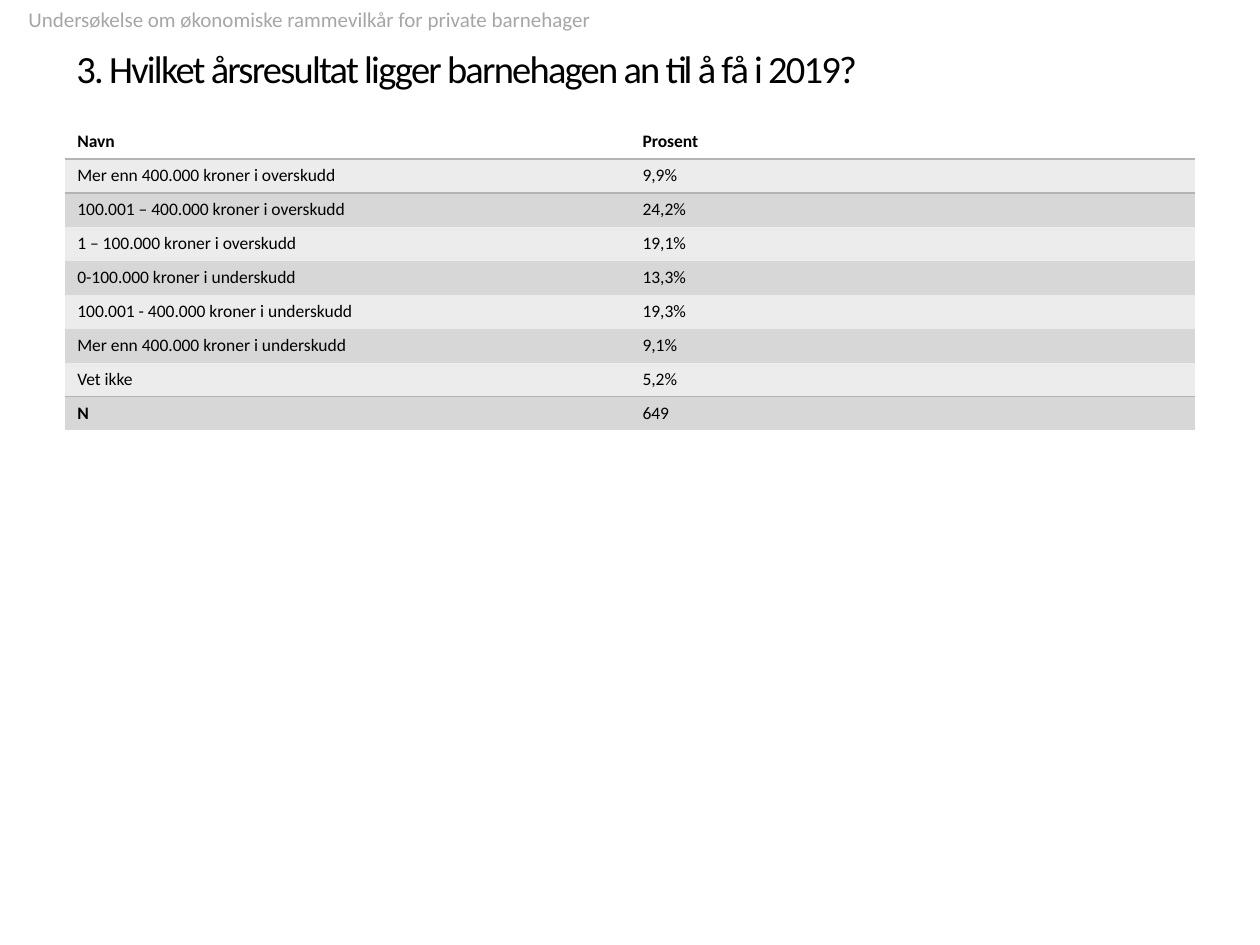
import pptx
import pptx.util
import pptx.dml.color
import pptx.enum.text
import pptx.oxml
import pptx.oxml.ns
from lxml import etree

Pt = pptx.util.Pt
RGB = pptx.dml.color.RGBColor
BLACK = RGB(0x00, 0x00, 0x00)
WHITE = RGB(0xFF, 0xFF, 0xFF)
GREY = RGB(0xA6, 0xA6, 0xA6)
RULE = RGB(0xB4, 0xB4, 0xB4)
LIGHT = RGB(0xEC, 0xEC, 0xEC)
DARK = RGB(0xD7, 0xD7, 0xD8)

ANCHOR = pptx.enum.text.MSO_ANCHOR
LEFT = pptx.enum.text.PP_ALIGN.LEFT
FRAME = {"word_wrap": True, "auto_size": pptx.enum.text.MSO_AUTO_SIZE.NONE}
TITLE = {"name": "Calibri", "size": Pt(22), "bold": False}
TOPIC = {"name": "Calibri", "size": Pt(12), "bold": False}
CELL = {"name": "Calibri", "size": Pt(10)}

ROWS = [
    ("Navn", "Prosent"),
    ("Mer enn 400.000 kroner i overskudd", "9,9%"),
    ("100.001 – 400.000 kroner i overskudd", "24,2%"),
    ("1 – 100.000 kroner i overskudd", "19,1%"),
    ("0-100.000 kroner i underskudd", "13,3%"),
    ("100.001 - 400.000 kroner i underskudd", "19,3%"),
    ("Mer enn 400.000 kroner i underskudd", "9,1%"),
    ("Vet ikke", "5,2%"),
    ("N", "649"),
]


def apply(item, values):
    for key, value in values.items():
        setattr(item, key, value)


def write(frame, text, style, color):
    """Put one left-aligned run in the frame and return the run."""
    par = frame.paragraphs[0]
    par.alignment = LEFT
    run = par.add_run()
    run.text = text
    apply(run.font, style)
    run.font.color.rgb = color
    return run


def place(holder, left, top, width, height, anchor):
    apply(holder, {"left": Pt(left), "top": Pt(top),
                   "width": Pt(width), "height": Pt(height)})
    apply(holder.text_frame, {**FRAME, "vertical_anchor": anchor})


def add_title(slide, text):
    title = slide.shapes.title
    place(title, 36.5, 17.5, 648, 43, ANCHOR.MIDDLE)
    run = write(title.text_frame, text, TITLE, BLACK)
    run.font._element.set("spc", "-100")


def add_topic(slide, text):
    body = slide.placeholders[1]
    place(body, 0, 0, 720, 18, ANCHOR.TOP)
    write(body.text_frame, text, TOPIC, GREY)
    props = body.text_frame.paragraphs[0]._p.get_or_add_pPr()
    props.set("marL", str(Pt(9)))
    props.set("indent", "0")
    etree.SubElement(props, pptx.oxml.ns.qn("a:buNone"))


def rule(cell, side):
    """Draw a thin rule on the side lnT or lnB of a cell."""
    line = pptx.oxml.parse_xml(
        f'<a:{side} {pptx.oxml.ns.nsdecls("a")} w="{Pt(1)}"><a:solidFill>'
        f'<a:srgbClr val="{RULE}"/></a:solidFill></a:{side}>')
    cell._tc.get_or_add_tcPr().insert(0, line)


def add_grid(slide, rows):
    last = len(rows) - 1
    high = 19.4
    table = slide.shapes.add_table(
        len(rows), 2, Pt(37), Pt(71.5), Pt(646), Pt(high * len(rows))).table
    for row, texts in enumerate(rows):
        table.rows[row].height = Pt(high)
        for col, text in enumerate(texts):
            cell = table.cell(row, col)
            cell.fill.solid()
            cell.fill.fore_color.rgb = (
                WHITE if row == 0 else LIGHT if row % 2 else DARK)
            bold = row == 0 or (row == last and col == 0)
            write(cell.text_frame, text, {**CELL, "bold": bold}, BLACK)
            if row in (0, last - 1):
                rule(cell, "lnB")
            elif row in (1, last):
                rule(cell, "lnT")
    # The plain "no style, no grid" look leaves only the rules set above.
    style = table._tbl.tblPr.find(pptx.oxml.ns.qn("a:tableStyleId"))
    style.text = "{2D5ABB26-0587-4C30-8999-92F81FD0307C}"


def main():
    deck = pptx.Presentation()
    apply(deck, {"slide_width": Pt(720), "slide_height": Pt(540)})
    slide = deck.slides.add_slide(deck.slide_layouts[1])
    add_title(slide,
              "3. Hvilket årsresultat ligger barnehagen an til å få i 2019?")
    add_topic(slide,
              "Undersøkelse om økonomiske rammevilkår for private barnehager")
    add_grid(slide, ROWS)
    deck.save("out.pptx")


if __name__ == "__main__":
    main()
